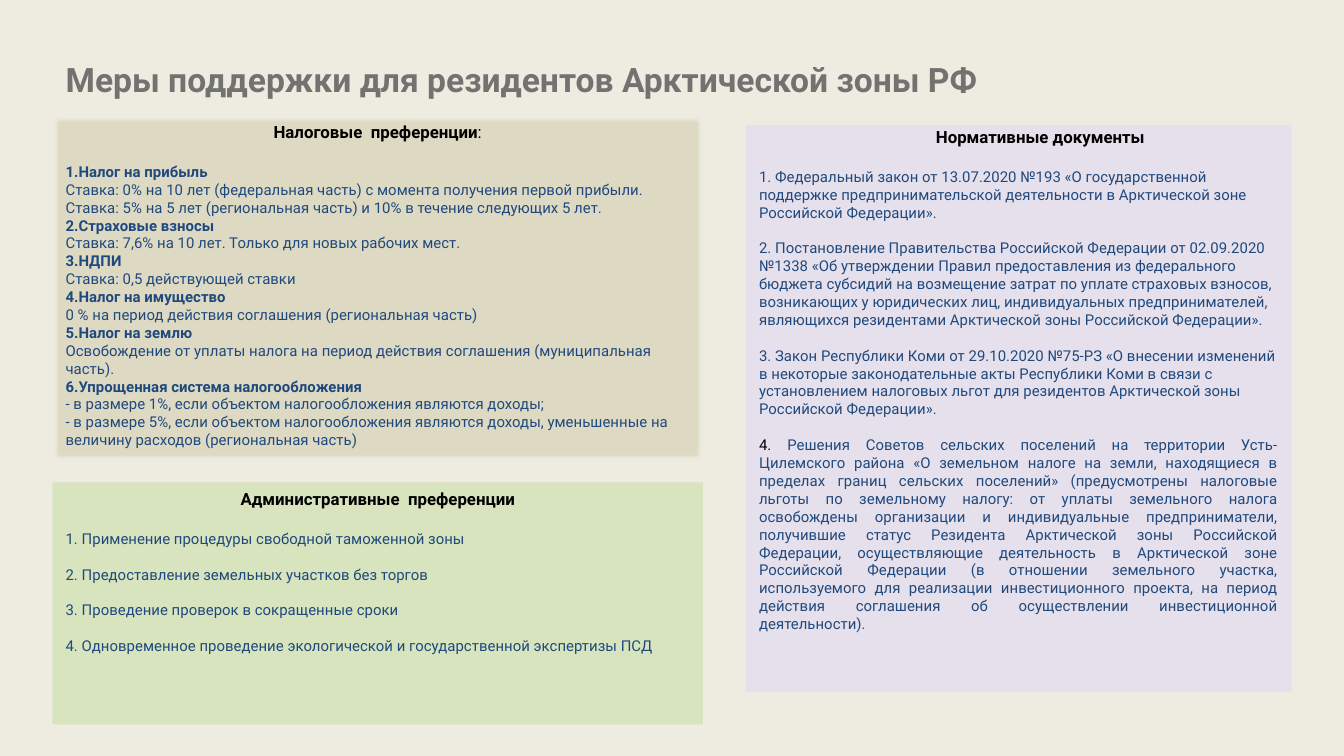
from dataclasses import dataclass

from lxml import etree
from pptx import Presentation
from pptx import util as u
from pptx.dml.color import RGBColor
from pptx.enum import shapes, text
from pptx.oxml.ns import qn


@dataclass(frozen=True)
class Theme:
    font: str = "Roboto"
    background: str = "EEECE1"
    title: str = "727271"
    heading: str = "000000"
    body: str = "1F497D"
    tax: str = "DDD9C3"
    administrative: str = "D7E4BD"
    documents: str = "E6E0EC"
    title_size: float = 18
    heading_size: float = 9
    body_size: float = 8
    heading_gap: float = 10.8
    item_gap: float = 9.6


class SlideBuilder:
    """Places elements on a square grid that is 100 columns wide."""

    def __init__(self, presentation, theme):
        self.theme = theme
        self.cell = presentation.slide_width / 100
        self.slide = presentation.slides.add_slide(presentation.slide_layouts[6])
        fill = self.slide.background.fill
        fill.solid()
        fill.fore_color.rgb = RGBColor.from_string(theme.background)

    def grid(self, *cells):
        return [u.Emu(round(count * self.cell)) for count in cells]

    def style(self, font, size, color, bold=False):
        font.name = self.theme.font
        font.size = u.Pt(size)
        font.bold = bold
        font.color.rgb = RGBColor.from_string(color)

    def title(self, wording, *place):
        frame = self.slide.shapes.add_textbox(*self.grid(*place)).text_frame
        frame.word_wrap = True
        paragraph = frame.paragraphs[0]
        paragraph.add_run().text = wording
        self.style(paragraph.font, self.theme.title_size, self.theme.title, True)

    def panel(self, color, *place, top_inset=0.5):
        shape = self.slide.shapes.add_shape(
            shapes.MSO_SHAPE.RECTANGLE, *self.grid(*place))
        shape.shadow.inherit = False
        shape.fill.solid()
        shape.fill.fore_color.rgb = RGBColor.from_string(color)
        shape.line.fill.background()
        frame = shape.text_frame
        frame.word_wrap = True
        frame.vertical_anchor = text.MSO_ANCHOR.TOP
        frame.margin_top, = self.grid(top_inset)
        return shape

    def soften(self, shape, points):
        effects = shape._element.spPr.find(qn("a:effectLst"))
        etree.SubElement(effects, qn("a:softEdge"), rad=str(u.Pt(points)))

    def heading(self, shape, wording, ending="", indent=0):
        paragraph = shape.text_frame.paragraphs[0]
        paragraph.alignment = text.PP_ALIGN.CENTER
        if indent:
            offset, = self.grid(indent)
            paragraph._p.get_or_add_pPr().set("indent", str(offset))
        paragraph.add_run().text = wording
        if ending:
            run = paragraph.add_run()
            run.text = ending
            run.font.bold = False
        self.style(paragraph.font, self.theme.heading_size, self.theme.heading, True)

    def item(self, shape, wording, gap=0, bold=False, number="", justified=False):
        """Add a body paragraph; number is an opening in the heading colour."""
        paragraph = shape.text_frame.add_paragraph()
        paragraph.alignment = (
            text.PP_ALIGN.JUSTIFY if justified else text.PP_ALIGN.LEFT)
        paragraph.space_before = u.Pt(gap)
        if number:
            run = paragraph.add_run()
            run.text = number
            run.font.color.rgb = RGBColor.from_string(self.theme.heading)
        paragraph.add_run().text = wording
        self.style(paragraph.font, self.theme.body_size, self.theme.body, bold)


TAXES = [
    ("1.Налог на прибыль", [
        "Ставка: 0% на 10 лет (федеральная часть) с момента получения первой прибыли.",
        "Ставка: 5% на 5 лет (региональная часть) и 10% в течение следующих 5 лет."]),
    ("2.Страховые взносы", ["Ставка: 7,6% на 10 лет. Только для новых рабочих мест."]),
    ("3.НДПИ", ["Ставка: 0,5 действующей ставки"]),
    ("4.Налог на имущество", ["0 % на период действия соглашения (региональная часть)"]),
    ("5.Налог на землю", [
        "Освобождение от уплаты налога на период действия соглашения "
        "(муниципальная часть)."]),
    ("6.Упрощенная система налогообложения", [
        "- в размере 1%, если объектом налогообложения являются доходы;",
        "- в размере 5%, если объектом налогообложения являются доходы, "
        "уменьшенные на величину расходов (региональная часть)"]),
]
ADMINISTRATIVE = [
    "1. Применение процедуры свободной таможенной зоны",
    "2. Предоставление земельных участков без торгов",
    "3. Проведение проверок в сокращенные сроки",
    "4. Одновременное проведение экологической и государственной экспертизы ПСД",
]
DOCUMENTS = [
    "1. Федеральный закон от 13.07.2020 №193 «О государственной поддержке "
    "предпринимательской деятельности в Арктической зоне Российской Федерации».",
    "2. Постановление Правительства Российской Федерации от 02.09.2020 №1338 "
    "«Об утверждении Правил предоставления из федерального бюджета субсидий на "
    "возмещение затрат по уплате страховых взносов, возникающих у юридических лиц, "
    "индивидуальных предпринимателей, являющихся резидентами Арктической зоны "
    "Российской Федерации».",
    "3. Закон Республики Коми от 29.10.2020 №75-РЗ «О внесении изменений в некоторые "
    "законодательные акты Республики Коми в связи с установлением налоговых льгот для "
    "резидентов Арктической зоны Российской Федерации».",
]
COUNCIL_DECISIONS = (
    "Решения Советов сельских поселений на территории Усть-Цилемского района "
    "«О земельном налоге на земли, находящиеся в пределах границ сельских поселений» "
    "(предусмотрены налоговые льготы по земельному налогу: от уплаты земельного налога "
    "освобождены организации и индивидуальные предприниматели, получившие статус "
    "Резидента Арктической зоны Российской Федерации, осуществляющие деятельность в "
    "Арктической зоне Российской Федерации (в отношении земельного участка, "
    "используемого для реализации инвестиционного проекта, на период действия "
    "соглашения об осуществлении инвестиционной деятельности)."
)


def main():
    presentation = Presentation()
    presentation.slide_width = u.Inches(10)
    presentation.slide_height = presentation.slide_width * 9 // 16
    theme = Theme()
    builder = SlideBuilder(presentation, theme)
    left, width = 3.9, 48.4

    builder.title("Меры поддержки для резидентов Арктической зоны РФ",
                  left, 3.9, 92.2, 4)

    taxes = builder.panel(theme.tax, left, 8.6, width, 25.7)
    builder.soften(taxes, 2.5)
    builder.heading(taxes, "Налоговые  преференции", ending=":")
    for index, (name, rates) in enumerate(TAXES):
        builder.item(taxes, name, bold=True, gap=0 if index else theme.heading_gap)
        for rate in rates:
            builder.item(taxes, rate)

    administrative = builder.panel(theme.administrative, left, 35.9, width, 18)
    builder.heading(administrative, "Административные  преференции")
    documents = builder.panel(theme.documents, 55.5, 9.3, 40.6, 42.2, top_inset=0.15)
    builder.heading(documents, "Нормативные документы", indent=3.2)
    for panel, items in ((administrative, ADMINISTRATIVE), (documents, DOCUMENTS)):
        for index, wording in enumerate(items):
            builder.item(panel, wording,
                         gap=theme.item_gap if index else theme.heading_gap)
    builder.item(documents, COUNCIL_DECISIONS, gap=theme.item_gap,
                 number="4. ", justified=True)

    presentation.save("out.pptx")


if __name__ == "__main__":
    main()
